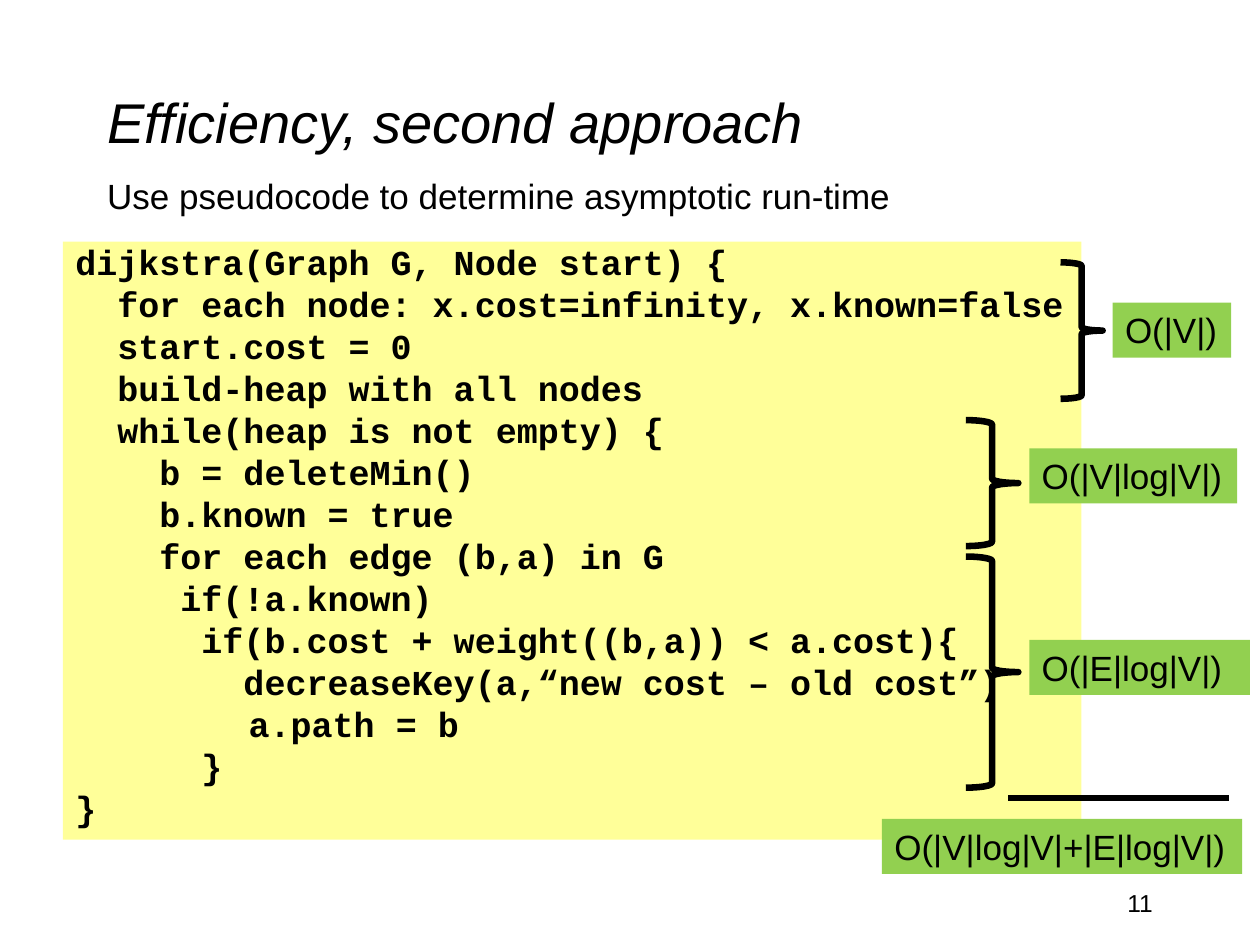
from dataclasses import dataclass

from lxml import etree
from pptx import Presentation
from pptx import util as u
from pptx.dml.color import RGBColor
from pptx.enum import shapes, text
from pptx.oxml.ns import qn

BLACK, YELLOW, GREEN = "000000", "FFFF99", "92D050"
RULE_WIDTH = u.Pt(3.75)
HANG = u.Cm(0.95)

CODE = """\
dijkstra(Graph G, Node start) {
  for each node: x.cost=infinity, x.known=false
  start.cost = 0
  build-heap with all nodes
  while(heap is not empty) {
    b = deleteMin()
    b.known = true
    for each edge (b,a) in G
     if(!a.known)
      if(b.cost + weight((b,a)) < a.cost){
        decreaseKey(a,“new cost – old cost”)
\t      a.path = b
      }
}"""


@dataclass
class Box:
    """Position and size in centimetres."""
    left: float
    top: float
    width: float
    height: float

    def emu(self) -> list:
        return [u.Cm(v) for v in (self.left, self.top, self.width, self.height)]


@dataclass
class Cost:
    label: str
    box: Box
    wrap: bool


COSTS = [
    Cost("O(|V|)", Box(22.43, 6.1, 2.39, 1.11), True),
    Cost("O(|V|log|V|)", Box(20.75, 9.04, 4.19, 1.11), False),
    Cost("O(|E|log|V|)", Box(20.75, 12.9, 4.45, 1.11), True),
    Cost("O(|V|log|V|+|E|log|V|)", Box(17.78, 16.51, 7.26, 1.11), False),
]
BRACES = [
    Box(21.38, 5.29, 0.85, 2.75),
    Box(19.47, 8.47, 1.06, 2.54),
    Box(19.47, 11.22, 1.06, 4.66),
]


def rgb(value: str) -> RGBColor:
    return RGBColor.from_string(value)


def style(p, size: float, name: str = "Arial", bold: bool = False,
          italic: bool = False) -> None:
    f = p.font
    f.size, f.name, f.bold, f.italic = u.Pt(size), name, bold, italic
    f.color.rgb = rgb(BLACK)


def add_text(s, box: Box, words: str, size: float, italic: bool = False,
             align=text.PP_ALIGN.LEFT, anchor=text.MSO_ANCHOR.TOP) -> None:
    tf = s.shapes.add_textbox(*box.emu()).text_frame
    tf.word_wrap = True
    tf.vertical_anchor = anchor
    p = tf.paragraphs[0]
    p.text, p.alignment = words, align
    style(p, size, italic=italic)


def add_panel(s, box: Box, fill: str):
    """Add a borderless rectangle and return its text frame."""
    sp = s.shapes.add_shape(shapes.MSO_SHAPE.RECTANGLE, *box.emu())
    sp.shadow.inherit = False
    sp.fill.solid()
    sp.fill.fore_color.rgb = rgb(fill)
    sp.line.fill.background()
    tf = sp.text_frame
    tf.word_wrap = True
    tf.vertical_anchor = text.MSO_ANCHOR.TOP
    return tf


def add_code(s, box: Box, code: str) -> None:
    tf = add_panel(s, box, YELLOW)
    for i, line in enumerate(code.split("\n")):
        p = tf.paragraphs[0] if i == 0 else tf.add_paragraph()
        p.text, p.alignment = line, text.PP_ALIGN.LEFT
        p.line_spacing = u.Pt(20)
        p.space_before = u.Pt(4 if i else 0)
        pPr = p._p.get_or_add_pPr()
        pPr.set("marL", str(HANG))
        pPr.set("indent", str(-HANG))
        style(p, 20, "Courier New", bold=True)


def add_cost(s, cost: Cost) -> None:
    tf = add_panel(s, cost.box, GREEN)
    tf.word_wrap = cost.wrap
    tf.auto_size = text.MSO_AUTO_SIZE.SHAPE_TO_FIT_TEXT
    p = tf.paragraphs[0]
    p.text, p.alignment = cost.label, text.PP_ALIGN.LEFT
    style(p, 20)


def add_brace(s, box: Box) -> None:
    sp = s.shapes.add_shape(shapes.MSO_SHAPE.RIGHT_BRACE, *box.emu())
    sp.shadow.inherit = False
    sp.fill.background()
    sp.line.color.rgb = rgb(BLACK)
    sp.line.width = RULE_WIDTH


def add_rule(s, left: float, right: float, y: float) -> None:
    c = s.shapes.add_connector(shapes.MSO_CONNECTOR.STRAIGHT,
                               u.Cm(left), u.Cm(y), u.Cm(right), u.Cm(y))
    c.line.color.rgb = rgb(BLACK)
    c.line.width = RULE_WIDTH
    etree.SubElement(c._element.spPr, qn("a:effectLst"))


def main() -> None:
    prs = Presentation()
    prs.slide_width, prs.slide_height = u.Cm(25.4), u.Cm(19.05)
    s = prs.slides.add_slide(prs.slide_layouts[6])

    # Heading and page number
    add_text(s, Box(1.91, 0.85, 21.59, 3.18), "Efficiency, second approach", 32,
             italic=True, anchor=text.MSO_ANCHOR.MIDDLE)
    add_text(s, Box(1.91, 3.39, 21.59, 1.06),
             "Use pseudocode to determine asymptotic run-time", 20)
    add_text(s, Box(18.2, 17.78, 5.29, 1.27), "11", 14,
             align=text.PP_ALIGN.RIGHT)

    # Pseudocode
    add_code(s, Box(1.27, 4.87, 20.53, 12.06), CODE)

    # Running time of each part, and the sum below the rule
    for brace in BRACES:
        add_brace(s, brace)
    for cost in COSTS:
        add_cost(s, cost)
    add_rule(s, 20.32, 24.77, 16.09)

    prs.save("out.pptx")


if __name__ == "__main__":
    main()
